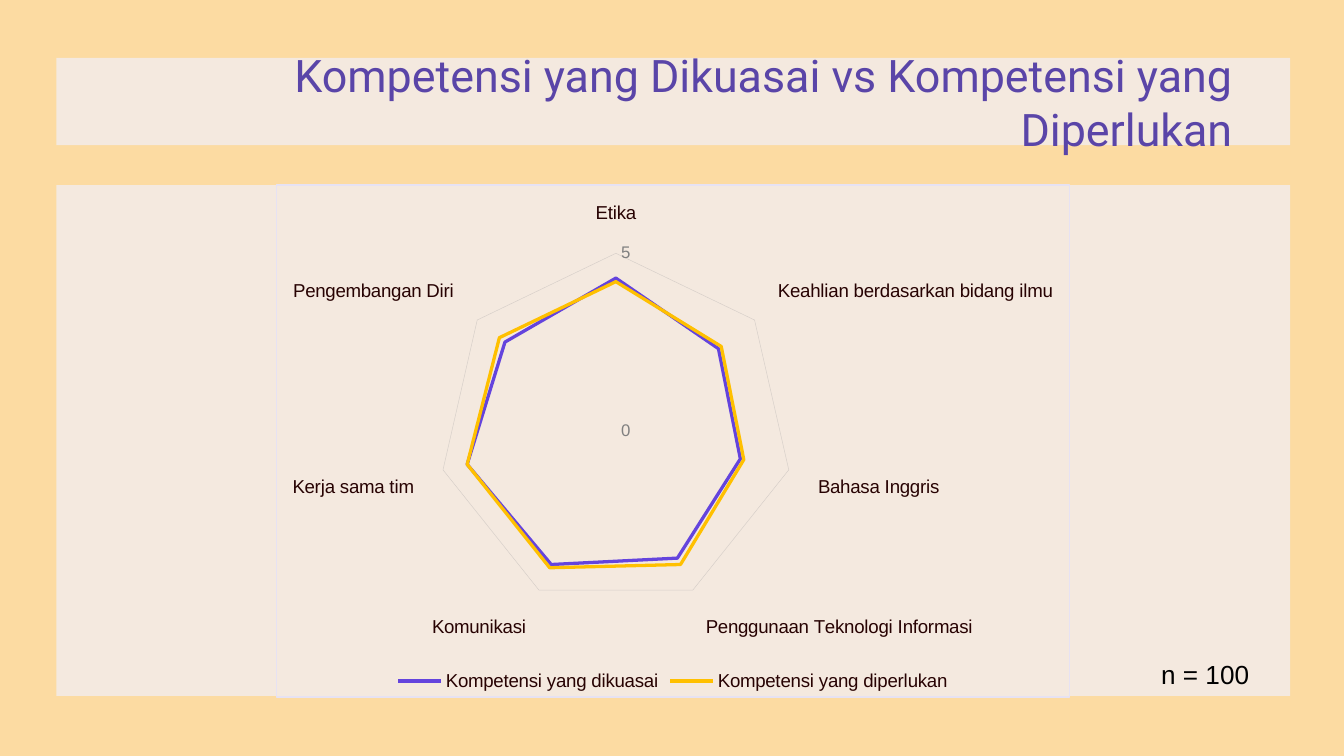
import pptx
import pptx.util
import pptx.chart.data
import pptx.dml.color
import pptx.enum.chart
import pptx.enum.shapes
import pptx.enum.text
import pptx.oxml
import pptx.oxml.ns

Pt = pptx.util.Pt
COLORS = {
    "background": "FCDBA2", "panel": "F4E9DF", "title": "5A45A8",
    "owned": "6444DD", "needed": "FFC000", "label": "270202",
    "scale": "808080", "grid": "D6CFC9", "border": "E6E2F3", "black": "000000",
}
TITLE = "Kompetensi yang Dikuasai vs Kompetensi yang Diperlukan"
SAMPLE = "n = 100"
COMPETENCIES = [
    "Etika", "Keahlian berdasarkan bidang ilmu", "Bahasa Inggris",
    "Penggunaan Teknologi Informasi", "Komunikasi", "Kerja sama tim",
    "Pengembangan Diri",
]
SERIES = [
    ("Kompetensi yang dikuasai", "owned", (4.3, 3.7, 3.6, 4, 4.2, 4.3, 4)),
    ("Kompetensi yang diperlukan", "needed", (4.2, 3.8, 3.7, 4.2, 4.3, 4.3, 4.2)),
]
PANELS = [(30.2, 31, 661, 46.8), (30.2, 99.2, 661, 273.6)]
TITLE_BOX = (33.2, 31, 634.2, 46.8)
CHART_BOX = (147.8, 98.8, 425.4, 275)
SAMPLE_BOX = (615, 349.4, 80, 24.5)


def color(name):
    return pptx.dml.color.RGBColor.from_string(COLORS[name])


def format_font(font, size, shade, face="Arial"):
    font.size, font.name, font.bold = Pt(size), face, False
    font.color.rgb = color(shade)


def format_line(line, shade, width):
    line.color.rgb = color(shade)
    line.width = Pt(width)


def write_text(box, text, size, shade, face="Arial", align="LEFT", anchor="TOP", inset=7.2):
    frame = box.text_frame
    frame.word_wrap = True
    frame.auto_size = pptx.enum.text.MSO_AUTO_SIZE.NONE
    frame.vertical_anchor = getattr(pptx.enum.text.MSO_ANCHOR, anchor)
    frame.margin_left = frame.margin_right = Pt(7.2)
    frame.margin_top = frame.margin_bottom = Pt(inset)
    para = frame.paragraphs[0]
    para.alignment = getattr(pptx.enum.text.PP_ALIGN, align)
    para.line_spacing = 1.0
    span = para.add_run()
    span.text = text
    format_font(span.font, size, shade, face)


def add_radar(page):
    data = pptx.chart.data.CategoryChartData()
    data.categories = COMPETENCIES
    for name, shade, values in SERIES:
        data.add_series(name, values)
    chart = page.shapes.add_chart(
        pptx.enum.chart.XL_CHART_TYPE.RADAR, *map(Pt, CHART_BOX), data
    ).chart
    format_font(chart.font, 10, "title")
    chart.has_title = False
    chart.has_legend = True
    chart.legend.position = pptx.enum.chart.XL_LEGEND_POSITION.BOTTOM
    chart.legend.include_in_layout = False
    format_font(chart.legend.font, 10, "label")

    for axis, size, shade in (
        (chart.category_axis, 10, "label"), (chart.value_axis, 9, "scale")
    ):
        axis.major_tick_mark = axis.minor_tick_mark = pptx.enum.chart.XL_TICK_MARK.NONE
        format_font(axis.tick_labels.font, size, shade)
    chart.category_axis.has_major_gridlines = False
    format_line(chart.category_axis.format.line, "border", 0.75)
    scale = chart.value_axis
    scale.minimum_scale, scale.maximum_scale, scale.major_unit = 0, 5, 5
    scale.tick_labels.number_format = "0"
    scale.tick_labels.number_format_is_linked = False
    scale.format.line.fill.background()
    scale.has_major_gridlines = True
    format_line(scale.major_gridlines.format.line, "grid", 0.25)

    chart.plots[0].vary_by_categories = False
    for series, (name, shade, values) in zip(chart.plots[0].series, SERIES):
        series.smooth = False
        series.marker.style = pptx.enum.chart.XL_MARKER_STYLE.NONE
        format_line(series.format.line, shade, 1.75)

    area = pptx.oxml.parse_xml(
        f'<c:spPr {pptx.oxml.ns.nsdecls("c", "a")}>'
        f'<a:solidFill><a:srgbClr val="{COLORS["panel"]}"/></a:solidFill>'
        f'<a:ln w="{Pt(0.75)}"><a:solidFill><a:srgbClr val="{COLORS["border"]}"/>'
        '</a:solidFill></a:ln></c:spPr>'
    )
    chart.element.find(pptx.oxml.ns.qn("c:chart")).addnext(area)


def main():
    deck = pptx.Presentation()
    deck.slide_width, deck.slide_height = Pt(720), Pt(405)
    page = deck.slides.add_slide(deck.slide_layouts[5])
    page.background.fill.solid()
    page.background.fill.fore_color.rgb = color("background")

    title = page.shapes.title
    for bounds in PANELS:
        panel = page.shapes.add_shape(
            pptx.enum.shapes.MSO_SHAPE.RECTANGLE, *map(Pt, bounds)
        )
        panel.shadow.inherit = False
        panel.fill.solid()
        panel.fill.fore_color.rgb = color("panel")
        panel.line.fill.background()
        title.element.addprevious(panel.element)

    title.left, title.top, title.width, title.height = map(Pt, TITLE_BOX)
    write_text(title, TITLE, 24, "title", face="Roboto", align="RIGHT", anchor="MIDDLE")
    add_radar(page)
    sample = page.shapes.add_textbox(*map(Pt, SAMPLE_BOX))
    write_text(sample, SAMPLE, 14, "black", inset=3.6)
    deck.save("out.pptx")


if __name__ == "__main__":
    main()
